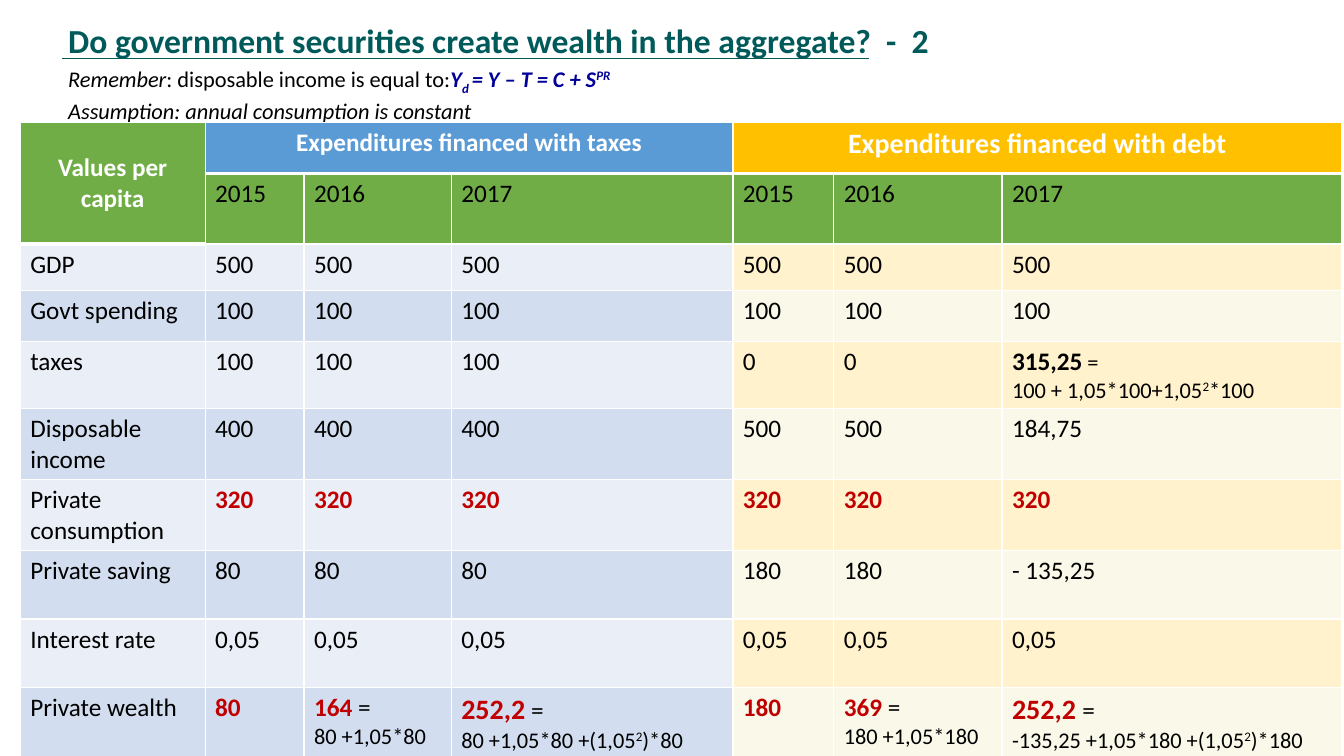
from lxml.etree import SubElement
from pptx import Presentation
from pptx.dml.color import RGBColor
from pptx.enum.shapes import MSO_CONNECTOR
from pptx.enum.text import MSO_ANCHOR, PP_ALIGN
from pptx.oxml.ns import qn
from pptx.util import Cm, Pt

BLACK = RGBColor(0, 0, 0)
WHITE = RGBColor(255, 255, 255)
TEAL = RGBColor(0x00, 0x5A, 0x5A)
RULE = RGBColor(0x00, 0x5A, 0x58)
NAVY = RGBColor(0x00, 0x00, 0x99)
RED = RGBColor(0xC0, 0x00, 0x00)
GREEN = RGBColor(0x70, 0xAD, 0x47)
BLUE = RGBColor(0x5B, 0x9B, 0xD5)
GOLD = RGBColor(0xFF, 0xC0, 0x00)
TAX_BANDS = (RGBColor(0xEA, 0xEF, 0xF7), RGBColor(0xD2, 0xDE, 0xEF))
DEBT_BANDS = (RGBColor(0xFF, 0xF2, 0xCC), RGBColor(0xF9, 0xF8, 0xE9))


def run(text, size=18, color=BLACK, bold=False, italic=False, base=0):
    return dict(text=text, size=size, color=color, bold=bold, italic=italic, base=base)


def small(text, base=0):
    return run(text, 16, base=base)


def red(text, size=18):
    return run(text, size, RED, True)


def formula(before, after):
    """Small line with a squared term between two parts."""
    return [small(before), small("2", 30), small(after)]


# Each text is a list of lines, each line a list of runs; a plain string is one run.
HEADING = [
    [run("Do government securities create wealth in the aggregate?  -  2", 24, TEAL, True)],
    [run("Remember", 16, italic=True), small(": disposable income is equal to:"),
     run("Y", 16, NAVY, True, True), run("d ", 16, NAVY, True, True, -25),
     run("= Y – T = C + S", 16, NAVY, True, True), run("PR", 16, NAVY, True, True, 30)],
    [run("Assumption: annual consumption is constant", 16, italic=True)],
]
GROUPS = [  # row, column, last row, last column, text, size, fill
    (0, 0, 1, 0, "Values per capita", 18, GREEN),
    (0, 1, 0, 3, "Expenditures financed with taxes", 18, BLUE),
    (0, 4, 0, 6, "Expenditures financed with debt", 20, GOLD),
]
YEARS = ["2015", "2016", "2017"] * 2
ROWS = [
    ["GDP"] + ["500"] * 6,
    ["Govt spending"] + ["100"] * 6,
    ["taxes"] + ["100"] * 3 + ["0"] * 2
    + [[[run("315,25", bold=True), small(" =")], formula("100 + 1,05*100+1,05", "*100")]],
    ["Disposable income"] + ["400"] * 3 + ["500"] * 2 + ["184,75"],
    ["Private consumption"] + [[[red("320")]]] * 6,
    ["Private saving"] + ["80"] * 3 + ["180"] * 2 + ["- 135,25"],
    ["Interest rate"] + ["0,05"] * 6,
    ["Private wealth",
     [[red("80")]],
     [[red("164"), run(" =")], [small("80 +1,05*80")]],
     [[red("252,2", 20), run(" =")], formula("80 +1,05*80 +(1,05", ")*80")],
     [[red("180")]],
     [[red("369"), run(" =")], [small("180 +1,05*180")]],
     [[red("252,2 ", 20), run("=")], formula("-135,25 +1,05*180 +(1,05", ")*180")]],
]
COL_WIDTHS = [4.66, 2.49, 3.71, 7.1, 2.54, 4.24, 8.56]
ROW_HEIGHTS = [1.29, 1.75, 1.18, 1.27, 1.7, 1.75, 1.79, 1.73, 1.73, 1.98]


def write(tf, lines, align=PP_ALIGN.LEFT):
    if isinstance(lines, str):
        lines = [[run(lines)]]
    for i, line in enumerate(lines):
        p = tf.add_paragraph() if i else tf.paragraphs[0]
        p.alignment = align
        for part in line:
            r = p.add_run()
            r.text = part["text"]
            r.font.name = "Calibri"
            r.font.size = Pt(part["size"])
            r.font.bold = part["bold"]
            r.font.italic = part["italic"]
            r.font.color.rgb = part["color"]
            if part["base"]:
                r._r.get_or_add_rPr().set("baseline", str(part["base"] * 1000))


def style_cell(cell, color, bottom=1):
    """White borders, then the fill, in the order the schema asks for."""
    tcPr = cell._tc.get_or_add_tcPr()
    for side, width in (("L", 1), ("R", 1), ("T", 1), ("B", bottom)):
        ln = SubElement(tcPr, qn("a:ln" + side), w=str(Pt(width)))
        fill = SubElement(ln, qn("a:solidFill"))
        SubElement(fill, qn("a:srgbClr"), val=str(WHITE))
    cell.fill.solid()
    cell.fill.fore_color.rgb = color


def add_heading(s):
    line = s.shapes.add_connector(MSO_CONNECTOR.STRAIGHT, Cm(1.57), Cm(1.47), Cm(21.9), Cm(1.47))
    line.line.color.rgb = RULE
    line.line.width = Pt(0.5)
    SubElement(line._element.spPr, qn("a:effectLst"))

    tf = s.shapes.add_textbox(Cm(1.47), Cm(0.38), Cm(32.4), Cm(2.8)).text_frame
    tf.word_wrap = True
    write(tf, HEADING)
    remember, assumption = tf.paragraphs[1:]
    remember.space_before = Pt(2.4)
    assumption.space_before = Pt(0)
    for p in (remember, assumption):
        p.line_spacing = 1.05
        pPr = p._p.get_or_add_pPr()
        pPr.set("marL", str(Cm(0.79)))
        pPr.set("indent", str(-Cm(0.79)))


def add_values(s):
    table = s.shapes.add_table(len(ROW_HEIGHTS), len(COL_WIDTHS), Cm(0.51), Cm(3.08),
                               Cm(sum(COL_WIDTHS)), Cm(sum(ROW_HEIGHTS))).table
    table.first_row = table.horz_banding = False
    for column, width in zip(table.columns, COL_WIDTHS):
        column.width = Cm(width)
    for row, height in zip(table.rows, ROW_HEIGHTS):
        row.height = Cm(height)

    for top, left, last_row, last_col, text, size, color in GROUPS:
        for i in range(top, last_row + 1):
            for j in range(left, last_col + 1):
                style_cell(table.cell(i, j), color, 3)
        cell = table.cell(top, left)
        cell.merge(table.cell(last_row, last_col))
        write(cell.text_frame, [[run(text, size, WHITE, True)]], PP_ALIGN.CENTER)
    table.cell(0, 0).vertical_anchor = MSO_ANCHOR.MIDDLE

    for j, year in enumerate(YEARS, 1):
        style_cell(table.cell(1, j), GREEN)
        write(table.cell(1, j).text_frame, year)
    for i, row in enumerate(ROWS):
        for j, content in enumerate(row):
            cell = table.cell(i + 2, j)
            style_cell(cell, (TAX_BANDS if j < 4 else DEBT_BANDS)[i % 2])
            write(cell.text_frame, content)


def main():
    prs = Presentation()
    prs.slide_width, prs.slide_height = Cm(33.87), Cm(19.05)
    s = prs.slides.add_slide(prs.slide_layouts[6])
    add_heading(s)
    add_values(s)
    prs.save("out.pptx")


if __name__ == "__main__":
    main()
